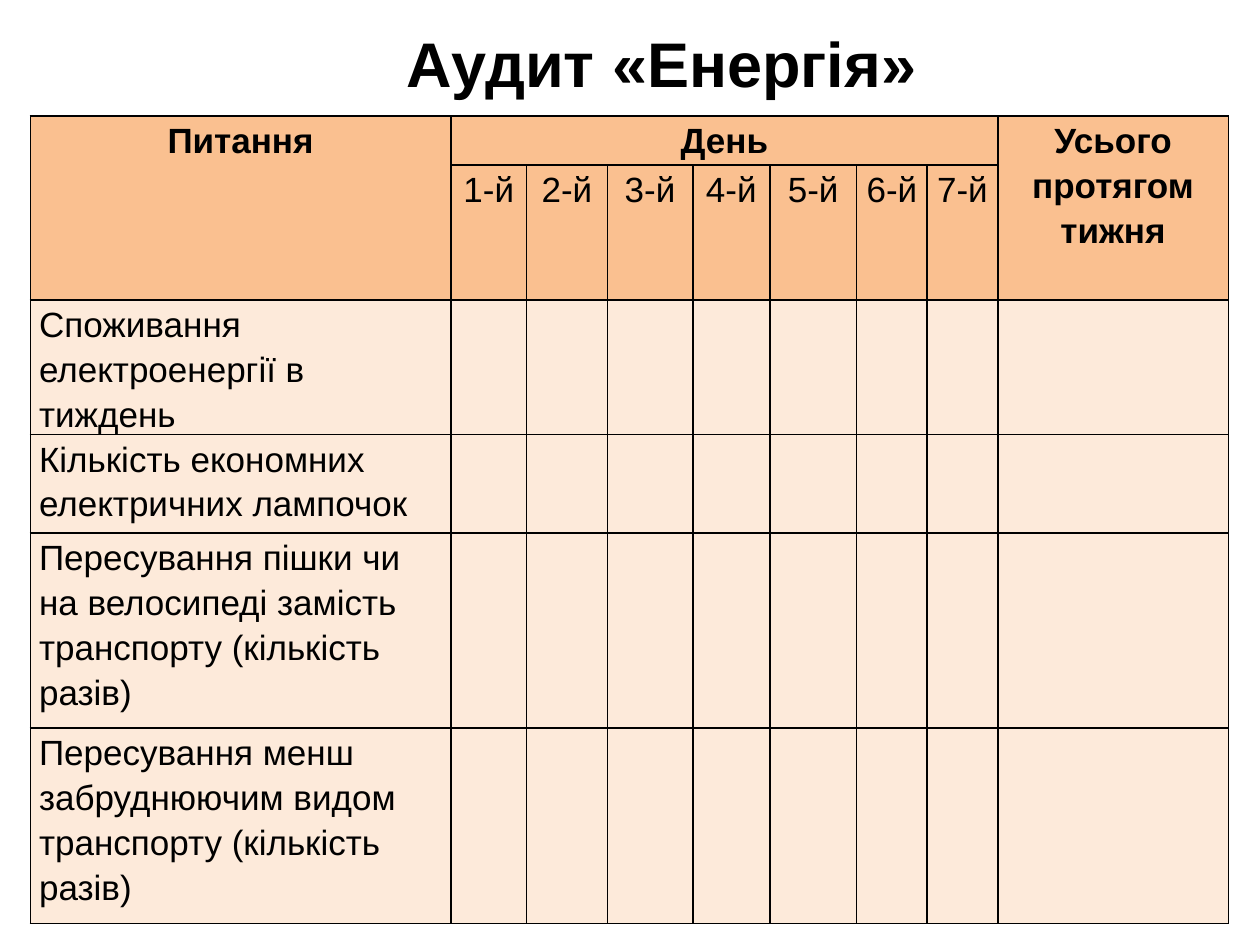
from lxml import etree
from pptx import Presentation
from pptx.dml.color import RGBColor
from pptx.enum import text
from pptx.oxml import ns
from pptx.util import Inches, Pt

TITLE = "Аудит «Енергія»"
QUESTION, DAY, TOTAL = "Питання", "День", "Усього протягом тижня"
DAYS = [f"{number}-й" for number in range(1, 8)]
QUESTIONS = [
    "Споживання електроенергії в тиждень",
    "Кількість економних електричних лампочок",
    "Пересування пішки чи на велосипеді замість транспорту (кількість разів)",
    "Пересування менш забруднюючим видом транспорту (кількість разів)",
]
COLUMN_WIDTHS = [3.34, 0.6, 0.64, 0.68, 0.61, 0.69, 0.56, 0.56, 1.83]
ROW_HEIGHTS = [0.39, 0.78, 0.78, 0.78, 1.55, 1.55]
HEADER_ROWS = 2
HEADER_FILL, BODY_FILL, BLACK = "FAC090", "FDEADA", "000000"


def color(value):
    return RGBColor.from_string(value)


def set_font(paragraph, size, bold):
    font = paragraph.font
    font.name, font.size, font.bold = "Arial", Pt(size), bold
    font.color.rgb = color(BLACK)


def add_borders(cell):
    properties = cell._tc.get_or_add_tcPr()
    for side in ("lnL", "lnR", "lnT", "lnB"):
        line = etree.SubElement(properties, ns.qn(f"a:{side}"), w=str(Pt(1)))
        fill = etree.SubElement(line, ns.qn("a:solidFill"))
        etree.SubElement(fill, ns.qn("a:srgbClr"), val=BLACK)


def write_cell(cell, words, centered, bold):
    cell.text = words
    paragraph = cell.text_frame.paragraphs[0]
    paragraph.alignment = text.PP_ALIGN.CENTER if centered else text.PP_ALIGN.LEFT
    paragraph.line_spacing = 1.15
    paragraph.space_after = Pt(10)
    set_font(paragraph, 20, bold)


def add_audit_table(slide):
    row_count, column_count = len(ROW_HEIGHTS), len(COLUMN_WIDTHS)
    table = slide.shapes.add_table(
        row_count, column_count, Inches(0.24), Inches(0.92),
        Inches(sum(COLUMN_WIDTHS)), Inches(sum(ROW_HEIGHTS))).table
    table.first_row = table.horz_banding = False
    for column, width in zip(table.columns, COLUMN_WIDTHS):
        column.width = Inches(width)
    for row_index, (row, height) in enumerate(zip(table.rows, ROW_HEIGHTS)):
        row.height = Inches(height)
        for cell in row.cells:
            add_borders(cell)
            cell.fill.solid()
            cell.fill.fore_color.rgb = color(
                HEADER_FILL if row_index < HEADER_ROWS else BODY_FILL)
            cell.margin_left = cell.margin_right = Inches(0.07)
            cell.margin_top = cell.margin_bottom = 0

    last = column_count - 1
    table.cell(0, 0).merge(table.cell(1, 0))
    table.cell(0, 1).merge(table.cell(0, last - 1))
    table.cell(0, last).merge(table.cell(1, last))
    for column, words in ((0, QUESTION), (1, DAY), (last, TOTAL)):
        write_cell(table.cell(0, column), words, centered=True, bold=True)
    for column, words in enumerate(DAYS, start=1):
        write_cell(table.cell(1, column), words, centered=True, bold=False)
    for row, words in enumerate(QUESTIONS, start=HEADER_ROWS):
        write_cell(table.cell(row, 0), words, centered=False, bold=False)


def add_title(slide):
    box = slide.shapes.add_textbox(Inches(2.61), Inches(0.14), Inches(4.79), Inches(0.71))
    frame = box.text_frame
    frame.text = TITLE
    frame.word_wrap = False
    frame.auto_size = text.MSO_AUTO_SIZE.SHAPE_TO_FIT_TEXT
    frame.vertical_anchor = text.MSO_ANCHOR.MIDDLE
    paragraph = frame.paragraphs[0]
    paragraph.alignment = text.PP_ALIGN.CENTER
    paragraph._p.get_or_add_pPr().set("indent", str(Inches(0.49)))
    set_font(paragraph, 36, True)


def main():
    presentation = Presentation()
    presentation.slide_width, presentation.slide_height = Inches(10), Inches(7.5)
    slide = presentation.slides.add_slide(presentation.slide_layouts[6])
    add_audit_table(slide)
    add_title(slide)
    presentation.save("out.pptx")


if __name__ == "__main__":
    main()
